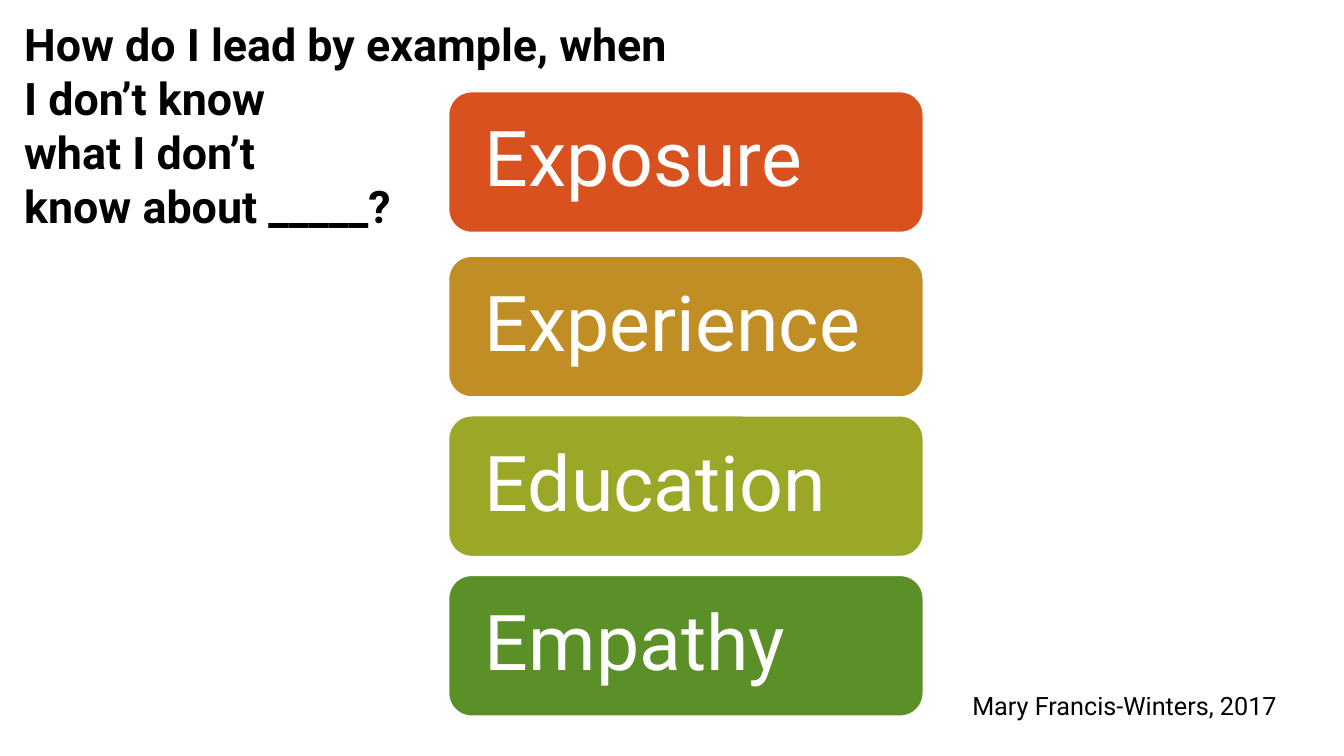
from pptx import Presentation
from pptx.dml.color import RGBColor
from pptx.enum.shapes import MSO_SHAPE
from pptx.enum.text import MSO_ANCHOR, MSO_AUTO_SIZE, PP_ALIGN
from pptx.util import Pt


def color(value):
    return RGBColor.from_string(value)


class Deck:
    """Holds the style and the current slide."""

    font = "Roboto"
    black = "000000"
    white = "FFFFFF"

    def __init__(self):
        self.prs = Presentation()
        self.prs.slide_width, self.prs.slide_height = Pt(960), Pt(540)
        self.s = self.prs.slides.add_slide(self.prs.slide_layouts[5])

    def set_text(self, sp, lines, size, rgb, bold=False, anchor=MSO_ANCHOR.TOP, spacing=1.0):
        tf = sp.text_frame
        tf.word_wrap = True
        tf.auto_size = MSO_AUTO_SIZE.NONE
        tf.vertical_anchor = anchor
        for i, line in enumerate(lines):
            p = tf.add_paragraph() if i else tf.paragraphs[0]
            p.alignment = PP_ALIGN.LEFT
            p.line_spacing = spacing
            p.space_before = Pt(0)
            r = p.add_run()
            r.text = line
            r.font.name = self.font
            r.font.size = Pt(size)
            r.font.bold = bold
            r.font.color.rgb = color(rgb)
        return tf

    def title(self, lines, x, y, w, h):
        sp = self.s.shapes.title
        sp.left, sp.top, sp.width, sp.height = Pt(x), Pt(y), Pt(w), Pt(h)
        self.set_text(sp, lines, 32, self.black, bold=True)

    def card(self, label, fill, x, y, w, h):
        sp = self.s.shapes.add_shape(MSO_SHAPE.ROUNDED_RECTANGLE, Pt(x), Pt(y), Pt(w), Pt(h))
        sp.shadow.inherit = False
        sp.fill.solid()
        sp.fill.fore_color.rgb = color(fill)
        sp.line.color.rgb = color(self.white)
        sp.line.width = Pt(2)
        tf = self.set_text(sp, [label], 55, self.white, anchor=MSO_ANCHOR.MIDDLE, spacing=0.9)
        tf.margin_left = tf.margin_right = Pt(21.5)

    def caption(self, text, x, y, w, h):
        sp = self.s.shapes.add_textbox(Pt(x), Pt(y), Pt(w), Pt(h))
        tf = self.set_text(sp, [text], 18, self.black, spacing=0.9)
        tf.margin_left = Pt(34.5)


def main():
    deck = Deck()
    cards = [
        ("Exposure", "DA5120", 65),
        ("Experience", "C08E24", 182.5),
        ("Education", "9BA727", 296.5),
        ("Empathy", "5B9029", 410.5),
    ]
    for label, fill, y in cards:
        deck.card(label, fill, 320, y, 340, 101.5)
    deck.caption("Mary Francis-Winters, 2017", 660, 492, 300, 27)
    deck.title(
        ["How do I lead by example, when I don’t know", "what I don’t", "know about _____?"],
        10, 8.5, 480, 184,
    )
    deck.prs.save("out.pptx")


if __name__ == "__main__":
    main()
